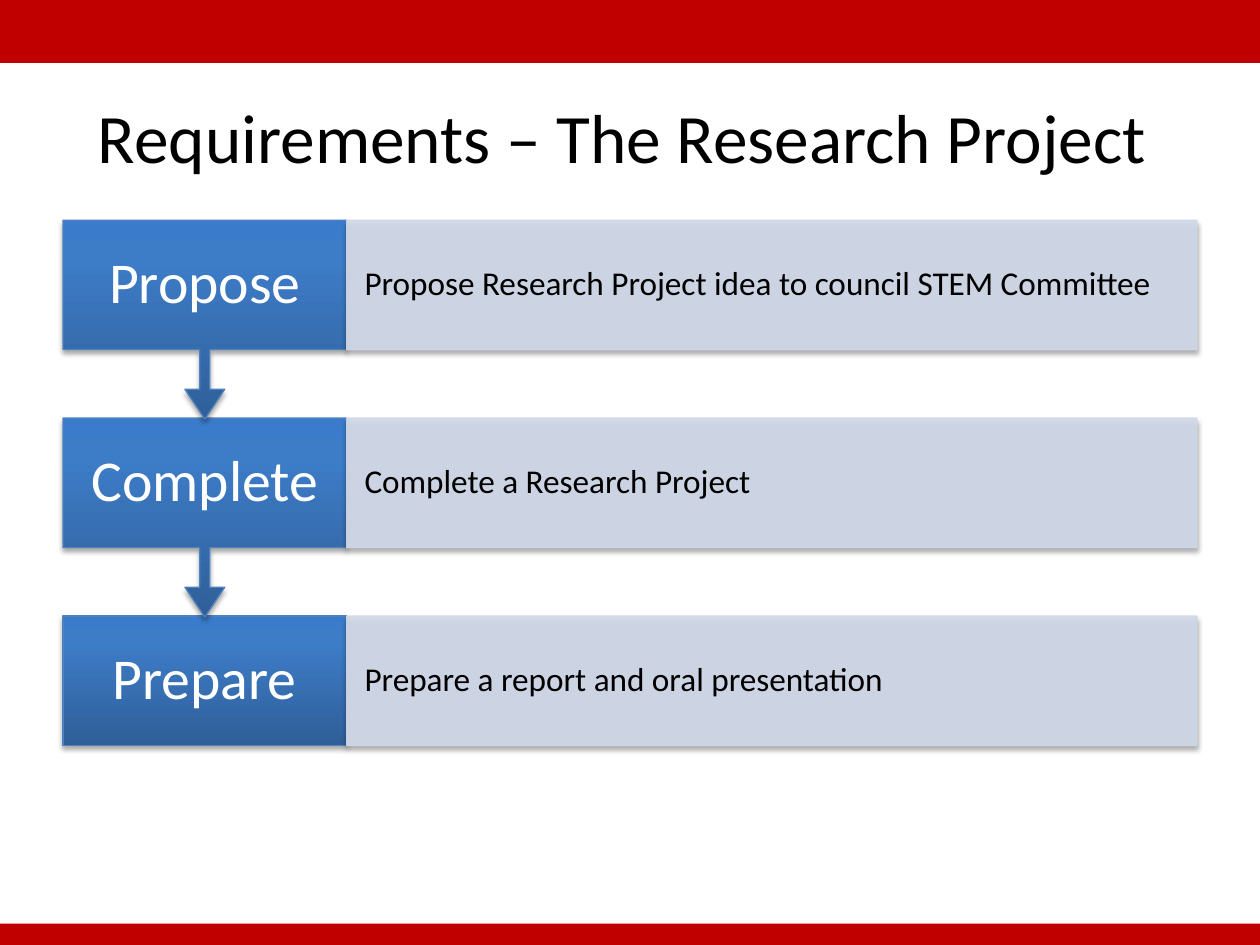
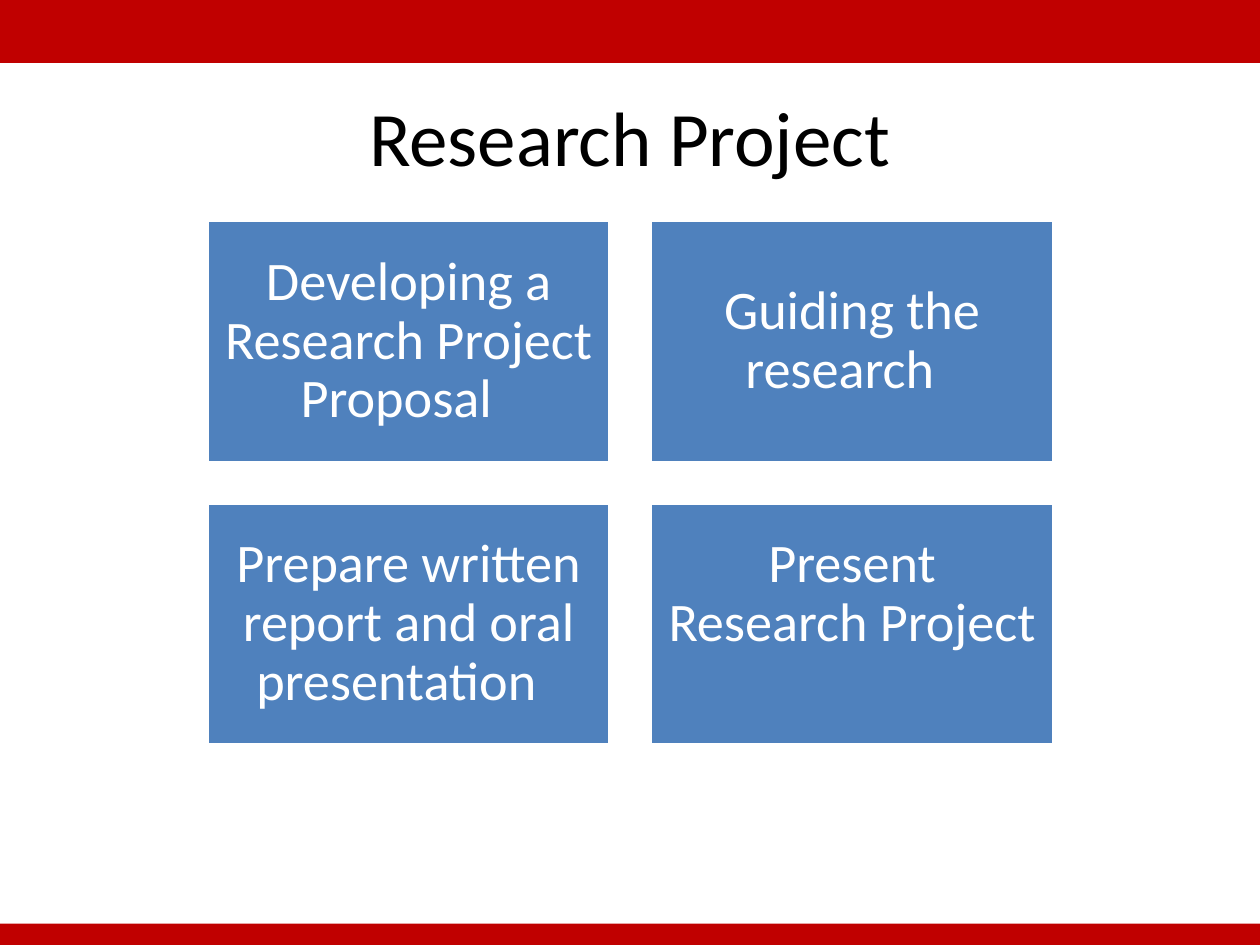
from dataclasses import dataclass
from typing import Any

from lxml.etree import SubElement
from pptx import Presentation
from pptx.dml.color import RGBColor
from pptx.enum.shapes import MSO_SHAPE
from pptx.enum.text import MSO_ANCHOR, PP_ALIGN
from pptx.oxml.ns import qn
from pptx.util import Cm, Pt

RED = RGBColor(0xC0, 0x00, 0x00)
BLACK = RGBColor(0x00, 0x00, 0x00)
WHITE = RGBColor(0xFF, 0xFF, 0xFF)
BLUE = RGBColor(0x4F, 0x81, 0xBD)
PALE_BLUE = RGBColor(0xD0, 0xD8, 0xE8)
GRADIENT = (
    (0, RGBColor(0x2F, 0x5F, 0x99)),
    (80, RGBColor(0x3D, 0x7C, 0xC7)),
    (100, RGBColor(0x3A, 0x7C, 0xCB)),
)
FONT = "Calibri"
SLIDE_WIDTH, SLIDE_HEIGHT = 25.4, 19.05
MARGIN = 1.27


@dataclass(frozen=True)
class Frame:
    """Position and size in centimetres."""

    left: float
    top: float
    width: float
    height: float


@dataclass(frozen=True)
class TextStyle:
    """Look of the text in one kind of box."""

    size: float
    color: RGBColor
    align: PP_ALIGN = PP_ALIGN.CENTER
    inset_x: float = 0.25
    inset_y: float = 0.13
    line_spacing: float = 0.9


@dataclass(frozen=True)
class Step:
    """One row of the process: a label and its description."""

    label: str
    detail: str


LABEL_STYLE = TextStyle(33, WHITE, inset_x=0.41, inset_y=0.66)
DETAIL_STYLE = TextStyle(19, BLACK, PP_ALIGN.LEFT, 0.36, 0.66)
TILE_STYLE = TextStyle(31, WHITE, inset_x=0.33, inset_y=0.33)

STEPS = (
    Step("Propose", "Propose Research Project idea to council STEM Committee "),
    Step("Complete", "Complete a Research Project "),
    Step("Prepare", "Prepare a report and oral presentation  "),
)
STEP_TOP, STEP_HEIGHT, STEP_PITCH, CALLOUT_HEIGHT = 4.44, 2.61, 3.99, 4.01
LABEL_WIDTH, DETAIL_WIDTH = 5.72, 17.14
CALLOUT_ADJUSTMENTS = (0.05, 0.1, 0.15, 0.65)

TILES = (
    "Developing a Research Project Proposal  ",
    "Guiding the research  ",
    "Prepare written report and oral presentation  ",
    "Present Research Project  ",
)
TILE_COLUMNS = 2
TILE_LEFT, TILE_TOP = 4.17, 4.45
TILE_WIDTH, TILE_HEIGHT, TILE_GAP = 8.13, 4.88, 0.81


def set_values(target: Any, values: dict[str, Any]) -> None:
    """Set every attribute named in the format values."""
    for name, value in values.items():
        setattr(target, name, value)


def place(frame: Frame) -> tuple[Cm, Cm, Cm, Cm]:
    """Turn a frame into lengths."""
    return Cm(frame.left), Cm(frame.top), Cm(frame.width), Cm(frame.height)


def write_text(box: Any, text: str, style: TextStyle) -> None:
    """Put one styled paragraph into a box."""
    set_values(box.text_frame, {
        "word_wrap": True,
        "vertical_anchor": MSO_ANCHOR.MIDDLE,
        "margin_left": Cm(style.inset_x),
        "margin_right": Cm(style.inset_x),
        "margin_top": Cm(style.inset_y),
        "margin_bottom": Cm(style.inset_y),
    })
    para = box.text_frame.paragraphs[0]
    set_values(para, {"alignment": style.align, "line_spacing": style.line_spacing})
    span = para.add_run()
    span.text = text
    set_values(span.font, {"name": FONT, "size": Pt(style.size)})
    span.font.color.rgb = style.color


def add_block(page: Any, frame: Frame, fill: RGBColor, line: RGBColor | None = None,
              line_width: float = 0.75, kind: MSO_SHAPE = MSO_SHAPE.RECTANGLE) -> Any:
    """Draw a flat filled shape with an optional outline."""
    block = page.shapes.add_shape(kind, *place(frame))
    block.shadow.inherit = False
    block.fill.solid()
    block.fill.fore_color.rgb = fill
    if line is None:
        block.line.fill.background()
    else:
        block.line.color.rgb = line
        block.line.width = Pt(line_width)
    return block


def apply_gradient(block: Any) -> None:
    """Fill a block with the vertical blue gradient."""
    block.fill.gradient()
    block.fill.gradient_angle = 90
    stops = block.element.spPr.find(f".//{qn('a:gsLst')}")
    for stop in list(stops):
        stops.remove(stop)
    for position, color in GRADIENT:
        stop = SubElement(stops, qn("a:gs"), pos=str(position * 1000))
        SubElement(stop, qn("a:srgbClr"), val=str(color))


def apply_opacity(block: Any, percent: int) -> None:
    """Make the fill and outline of a block partly transparent."""
    for color in list(block.element.spPr.iter(qn("a:srgbClr"))):
        SubElement(color, qn("a:alpha"), val=str(percent * 1000))


def apply_shadow(block: Any) -> None:
    """Give a block a soft shadow below it."""
    effects = block.element.spPr.find(qn("a:effectLst"))
    shadow = SubElement(effects, qn("a:outerShdw"), blurRad=str(Pt(3.1)),
                        dist=str(Pt(1.8)), dir="5400000", rotWithShape="0")
    color = SubElement(shadow, qn("a:srgbClr"), val=str(BLACK))
    SubElement(color, qn("a:alpha"), val="35000")


def add_page(deck: Any, title: str, title_size: float) -> Any:
    """Add a slide with the red bands and a title."""
    page = deck.slides.add_slide(deck.slide_layouts[6])
    for top, height in ((0, 1.27), (18.62, 0.43)):
        add_block(page, Frame(0, top, SLIDE_WIDTH, height), RED)
    frame = Frame(MARGIN, 1.47, SLIDE_WIDTH - 2 * MARGIN, 2.54)
    box = page.shapes.add_textbox(*place(frame))
    write_text(box, title, TextStyle(title_size, BLACK, line_spacing=1.0))
    return page


def add_step(page: Any, step: Step, top: float, is_last: bool) -> None:
    """Draw one process row, with an arrow to the next unless it is last."""
    kind = MSO_SHAPE.RECTANGLE if is_last else MSO_SHAPE.DOWN_ARROW_CALLOUT
    height = STEP_HEIGHT if is_last else CALLOUT_HEIGHT
    label = add_block(page, Frame(MARGIN, top, LABEL_WIDTH, height), BLUE, BLUE, kind=kind)
    if not is_last:
        for index, value in enumerate(CALLOUT_ADJUSTMENTS):
            label.adjustments[index] = value
    apply_gradient(label)
    apply_shadow(label)
    write_text(label, step.label, LABEL_STYLE)

    frame = Frame(MARGIN + LABEL_WIDTH, top, DETAIL_WIDTH, STEP_HEIGHT)
    detail = add_block(page, frame, PALE_BLUE, PALE_BLUE)
    apply_opacity(detail, 90)
    apply_shadow(detail)
    write_text(detail, step.detail, DETAIL_STYLE)


def build_requirements(deck: Any) -> None:
    """Build the process slide, lowest row first so arrows lie on top."""
    page = add_page(deck, "Requirements – The Research Project ", 39.6)
    last = len(STEPS) - 1
    for index in range(last, -1, -1):
        add_step(page, STEPS[index], STEP_TOP + index * STEP_PITCH, index == last)


def build_project(deck: Any) -> None:
    """Build the slide with the grid of project tiles."""
    page = add_page(deck, "Research Project", 44)
    for index, text in enumerate(TILES):
        row, column = divmod(index, TILE_COLUMNS)
        frame = Frame(TILE_LEFT + column * (TILE_WIDTH + TILE_GAP),
                      TILE_TOP + row * (TILE_HEIGHT + TILE_GAP),
                      TILE_WIDTH, TILE_HEIGHT)
        tile = add_block(page, frame, BLUE, WHITE, 2)
        write_text(tile, text, TILE_STYLE)


def main() -> None:
    """Build and save the deck."""
    deck = Presentation()
    set_values(deck, {"slide_width": Cm(SLIDE_WIDTH), "slide_height": Cm(SLIDE_HEIGHT)})
    build_requirements(deck)
    build_project(deck)
    deck.save("out.pptx")


if __name__ == "__main__":
    main()
